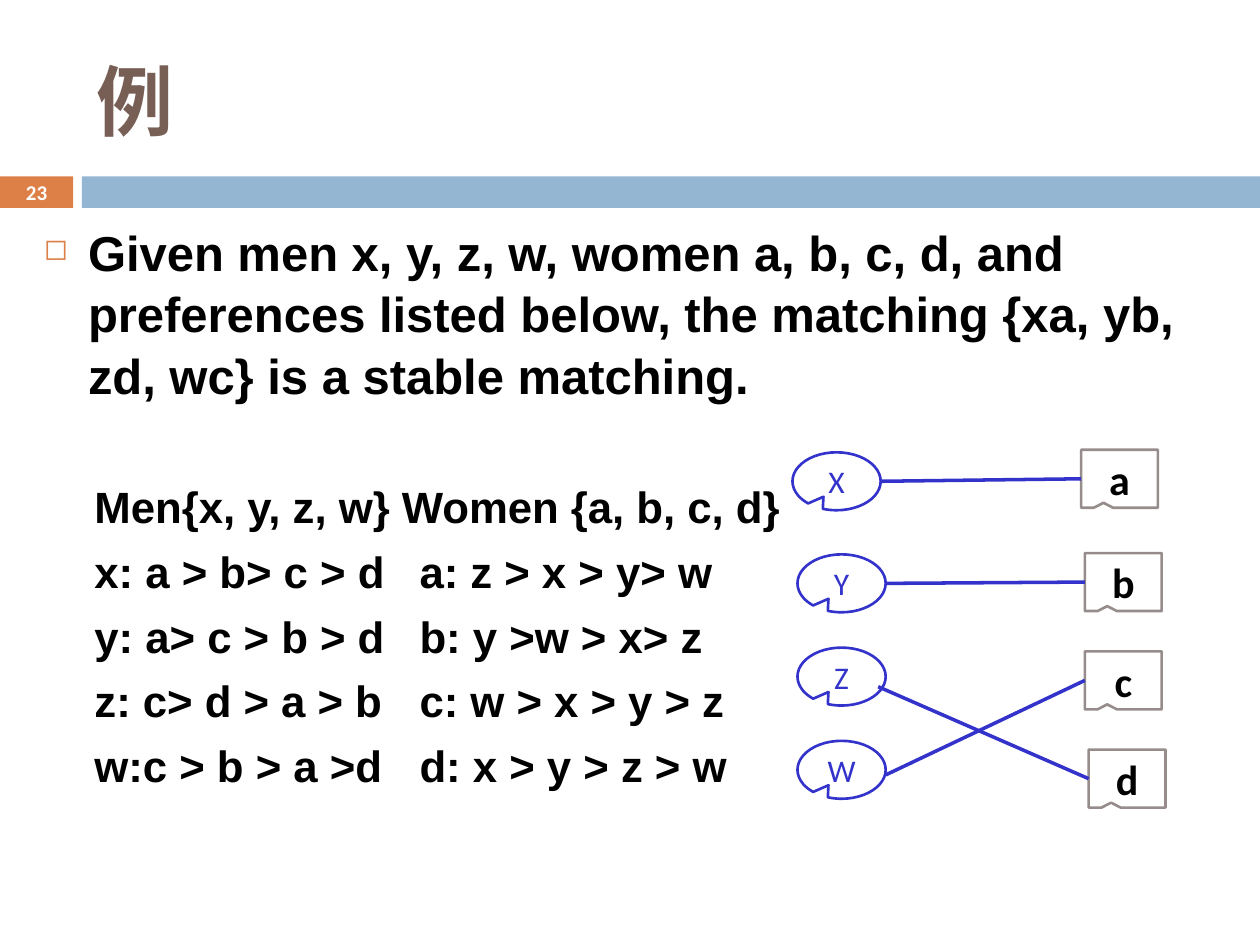
from lxml.etree import SubElement
from pptx import Presentation
from pptx.dml.color import RGBColor
from pptx.enum.shapes import MSO_CONNECTOR as Connector, MSO_SHAPE as Shape
from pptx.enum.text import MSO_ANCHOR as Anchor, PP_ALIGN as Align
from pptx.oxml.ns import qn
from pptx.util import Inches, Pt

COLUMNS, ROWS = 100, 75
LEFT_SIDE = 1


def color(hex_text):
    return RGBColor.from_string(hex_text)


class SlideBuilder:
    """Holds the style and the current slide; lengths are grid columns and rows."""
    orange, blue, brown = "DD8047", "94B6D2", "775F55"
    ink, white, violet, gray = "000000", "FFFFFF", "3333CC", "968C8C"

    def __init__(self, deck):
        self.slide = deck.slides.add_slide(deck.slide_layouts[6])
        self.column = deck.slide_width / COLUMNS
        self.row = deck.slide_height / ROWS

    def place(self, x, y):
        return round(x * self.column), round(y * self.row)

    def add_span(self, para, text, size, ink, bold=True, font="Calibri"):
        span = para.add_run()
        span.text = text
        span.font.size, span.font.bold, span.font.name = Pt(size), bold, font
        span.font.color.rgb = color(ink)

    def shape(self, kind, x, y, width, height, fill=None, line=None):
        shape = self.slide.shapes.add_shape(
            kind, *self.place(x, y), *self.place(width, height))
        shape.shadow.inherit = False
        if fill:
            shape.fill.solid()
            shape.fill.fore_color.rgb = color(fill)
        else:
            shape.fill.background()
        if line:
            shape.line.color.rgb = color(line)
            shape.line.width = Pt(1.5)
        else:
            shape.line.fill.background()
        return shape

    def clear_margins(self, frame):
        frame.margin_left = frame.margin_right = 0
        frame.margin_top = frame.margin_bottom = 0

    def label(self, shape, text, size, ink, bold=True):
        frame = shape.text_frame
        self.clear_margins(frame)
        frame.vertical_anchor = Anchor.MIDDLE
        para = frame.paragraphs[0]
        para.alignment = Align.CENTER
        self.add_span(para, text, size, ink, bold)

    def text_box(self, x, y, width, height, anchor=Anchor.TOP):
        box = self.slide.shapes.add_textbox(
            *self.place(x, y), *self.place(width, height))
        box.text_frame.word_wrap = True
        box.text_frame.vertical_anchor = anchor
        return box.text_frame

    def title(self, text):
        frame = self.text_box(6.7, 2.5, 89.2, 10.8, Anchor.MIDDLE)
        self.add_span(frame.paragraphs[0], text, 44, self.brown)

    def bullet(self, text):
        para = self.text_box(2.5, 16.9, 97.5, 15).paragraphs[0]
        para.line_spacing = 1.05
        props = para._p.get_or_add_pPr()
        props.set("marL", str(Inches(0.35)))
        props.set("indent", str(-Inches(0.35)))
        tint = SubElement(props, qn("a:buClr"))
        SubElement(tint, qn("a:srgbClr"), val=self.orange)
        SubElement(props, qn("a:buSzPct"), val="60000")
        SubElement(props, qn("a:buChar"), char="◻")
        self.add_span(para, text, 28, self.ink, font="Arial")

    def preferences(self, heading, rows):
        """Adds the heading, then each row's two lists, the second at a tab stop."""
        frame = self.text_box(7.5, 37.9, 55, 25)
        self.clear_margins(frame)
        for index, text in enumerate([heading] + ["\t".join(row) for row in rows]):
            para = frame.add_paragraph() if index else frame.paragraphs[0]
            para.line_spacing, para.space_after = 1.05, Pt(5.5)
            tabs = SubElement(para._p.get_or_add_pPr(), qn("a:tabLst"))
            SubElement(tabs, qn("a:tab"), pos=str(Inches(2.58)), algn="l")
            self.add_span(para, text, 25, self.ink, font="Arial")

    def man(self, name, x, y):
        oval = self.shape(Shape.OVAL_CALLOUT, x, y, 7, 4.6, line=self.violet)
        oval.adjustments[0], oval.adjustments[1] = -0.149, 0.267
        self.label(oval, name, 18, self.violet, bold=False)

    def woman(self, name, x, y):
        card = self.shape(Shape.RECTANGULAR_CALLOUT, x, y, 6.1, 4.6,
                          self.white, self.gray)
        card.adjustments[0], card.adjustments[1] = -0.208, 0.416
        self.label(card, name, 24, self.ink)
        return card

    def match(self, x, y, woman):
        start = self.place(x, y)
        line = self.slide.shapes.add_connector(Connector.STRAIGHT, *start, *start)
        line.end_connect(woman, LEFT_SIDE)
        line.line.color.rgb = color(self.violet)
        line.line.width = Pt(2)
        SubElement(line._element.spPr, qn("a:effectLst"))


def main():
    deck = Presentation()
    deck.slide_width, deck.slide_height = Inches(10), Inches(7.5)
    page = SlideBuilder(deck)

    number = page.shape(Shape.RECTANGLE, 0, 14, 5.8, 2.5, page.orange)
    page.label(number, "23", 12, page.white)
    page.shape(Shape.RECTANGLE, 6.5, 14, 93.5, 2.5, page.blue)
    page.title("例")
    page.bullet("Given men x, y, z, w, women a, b, c, d, and preferences listed "
                "below, the matching {xa, yb, zd, wc} is a stable matching.")
    page.preferences("Men{x, y, z, w} Women {a, b, c, d}", [
        ("x: a > b> c > d", "a: z > x > y> w"),
        ("y: a> c > b > d", "b: y >w > x> z"),
        ("z: c> d > a > b", "c: w > x > y > z"),
        ("w:c > b > a >d", "d: x > y > z > w"),
    ])

    for name, x, y in [("X", 62.9, 35.9), ("Y", 63.3, 44),
                       ("Z", 63.3, 51.4), ("W", 63.3, 58.8)]:
        page.man(name, x, y)
    women = {name: page.woman(name, x, y) for name, x, y in [
        ("a", 85.8, 35.7), ("b", 86.1, 43.9), ("c", 86.1, 51.7), ("d", 86.4, 59.5)]}
    for x, y, name in [(69.9, 38.2, "a"), (70.4, 46.3, "b"),
                       (70.3, 61.5, "c"), (69.7, 54.5, "d")]:
        page.match(x, y, women[name])

    deck.save("out.pptx")


if __name__ == "__main__":
    main()
